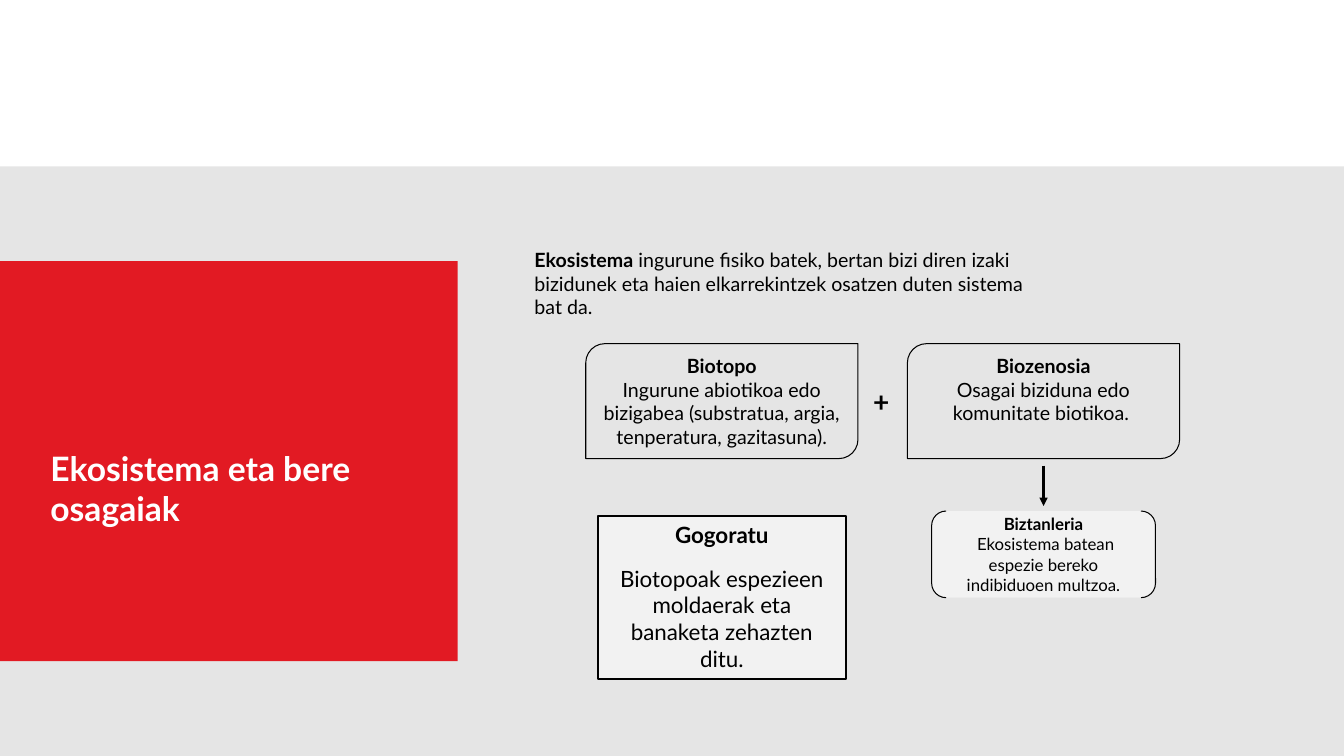
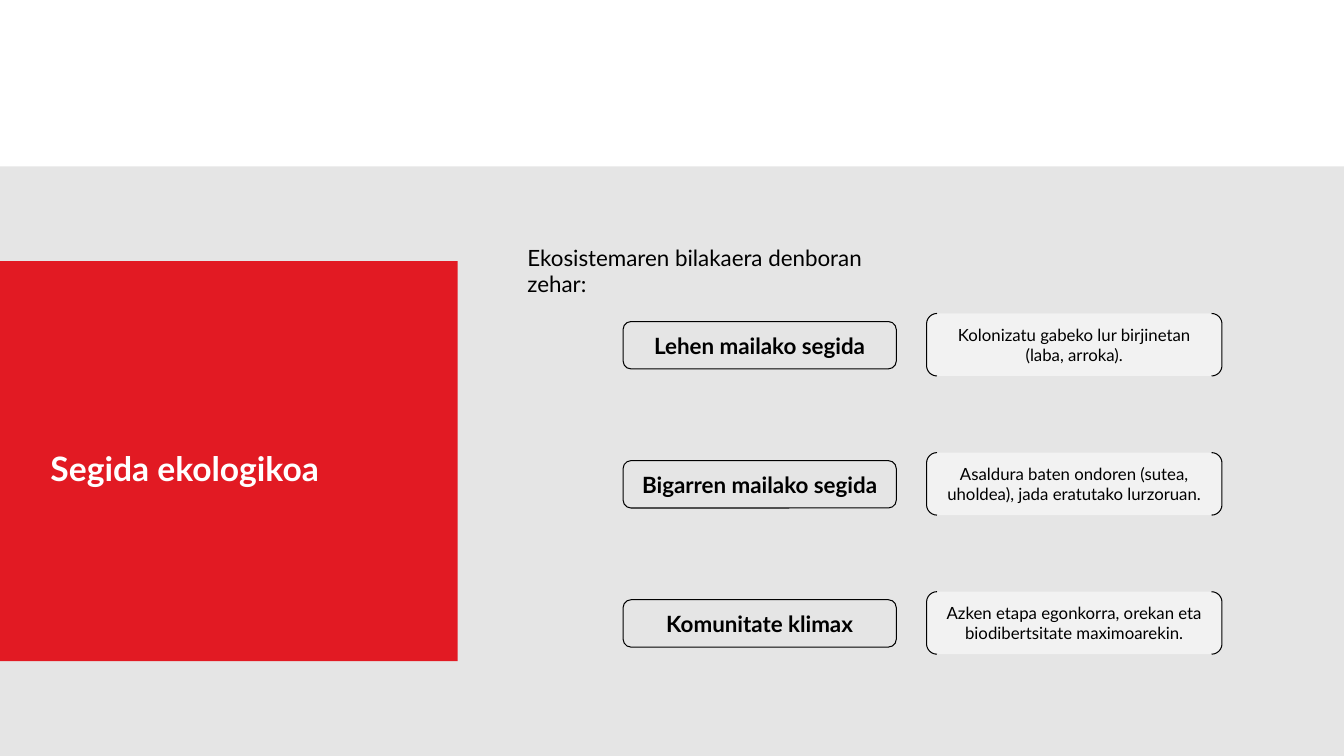
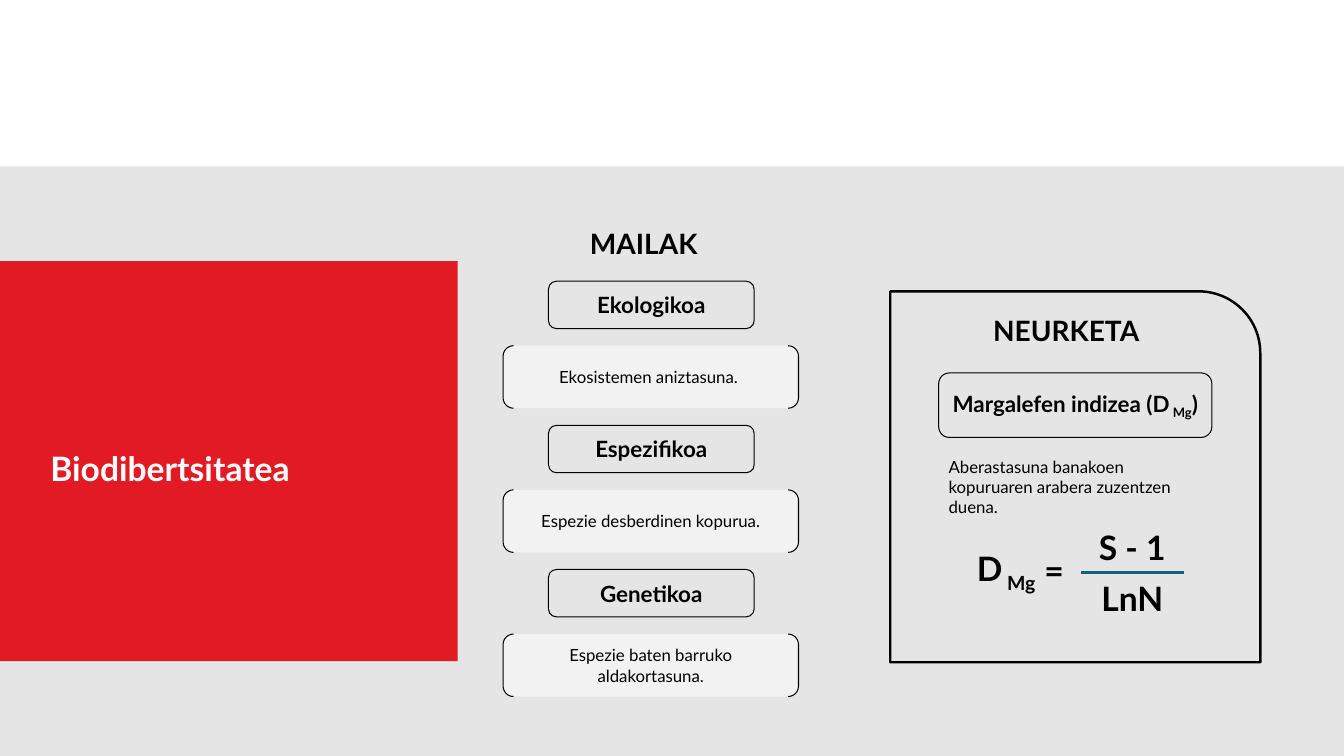
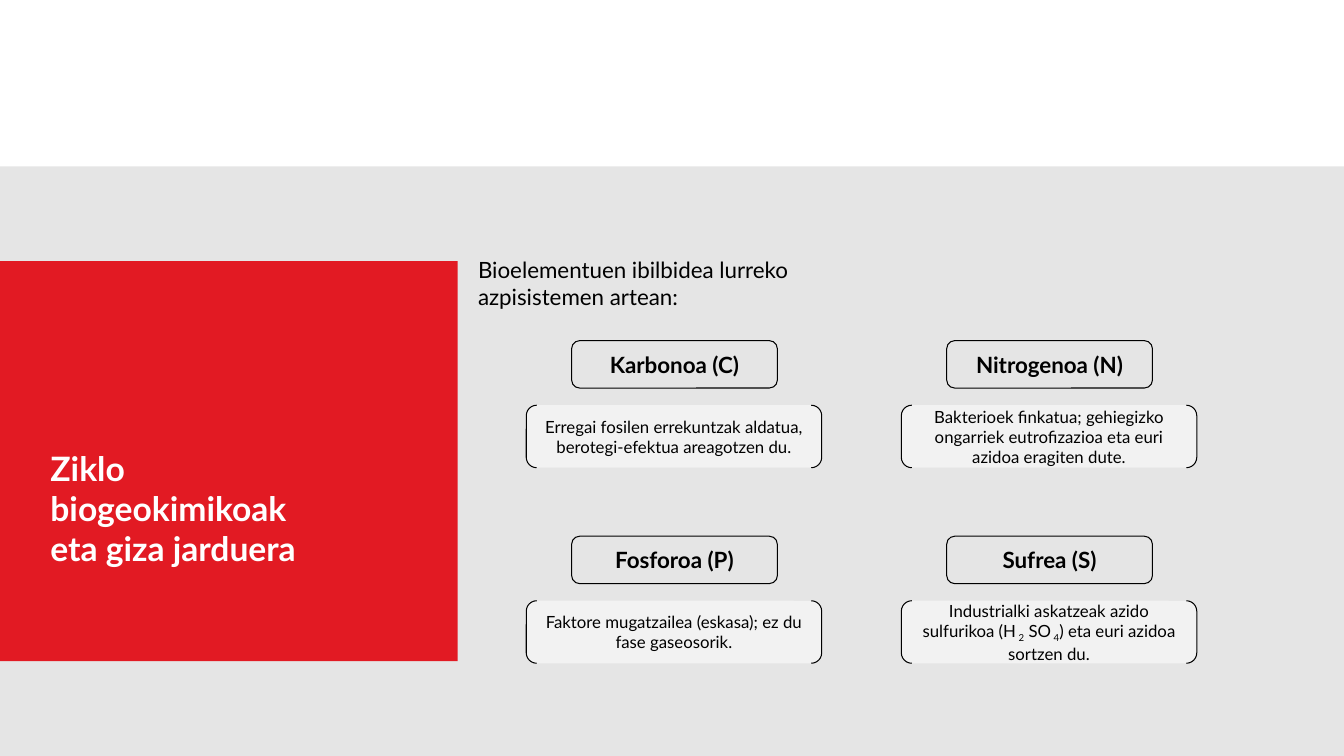
from dataclasses import dataclass
from typing import Any, NamedTuple, Optional

import lxml.etree
import pptx
import pptx.dml.color
import pptx.enum.shapes
import pptx.enum.text
import pptx.oxml.ns
import pptx.util

Inches = pptx.util.Inches
Pt = pptx.util.Pt
Kind = pptx.enum.shapes.MSO_SHAPE
Align = pptx.enum.text.PP_ALIGN
Anchor = pptx.enum.text.MSO_ANCHOR
qn = pptx.oxml.ns.qn


# Theme
@dataclass(frozen=True)
class Theme:
    font: str = "Lato"
    black: str = "000000"
    white: str = "FFFFFF"
    panel: str = "E5E5E5"
    red: str = "E21A23"
    note: str = "F2F2F2"
    rule: str = "156082"
    title: int = 24
    heading: int = 20
    term: int = 16
    body: int = 14
    detail: int = 12
    thin: float = 0.75
    medium: float = 1.5
    thick: float = 1.75


THEME = Theme()


class Place(NamedTuple):
    left: float
    top: float
    width: float
    height: float

    def lengths(self) -> list[int]:
        return [Inches(value) for value in self]


class Span(NamedTuple):
    text: str
    bold: bool = False
    subscript: bool = False


class Para(NamedTuple):
    spans: list[Span]
    after: float = 0
    spacing: Optional[float] = None


class Look(NamedTuple):
    kind: Any
    fill: Optional[str] = None
    opacity: int = 100
    line: Optional[float] = None
    anchor: Any = Anchor.MIDDLE
    align: Any = Align.CENTER


class Card(NamedTuple):
    term: str
    detail: list[Span]


PLAIN = Look(Kind.ROUNDED_RECTANGLE, align=Align.LEFT)
TERM = Look(Kind.ROUNDED_RECTANGLE, line=THEME.thin)
DETAIL = Look(Kind.DOUBLE_BRACKET, THEME.white, 50, THEME.thin)
COMPONENT = Look(Kind.ROUND_2_DIAG_RECTANGLE, line=THEME.thin, anchor=Anchor.TOP)
NOTE = Look(Kind.RECTANGLE, THEME.note, line=THEME.medium, anchor=Anchor.TOP)
COLUMN = Look(Kind.ROUND_1_RECTANGLE, anchor=Anchor.TOP)
FRAME = COLUMN._replace(line=THEME.thick)


def colour(code: str) -> pptx.dml.color.RGBColor:
    return pptx.dml.color.RGBColor.from_string(code)


def one(text: str, bold: bool = False) -> list[Para]:
    return [Para([Span(text, bold)])]


# Text and shapes
def write(box: Any, paras: list[Para], size: int, align: Any, anchor: Any,
          ink: str = THEME.black) -> None:
    frame = box.text_frame
    frame.word_wrap = True
    frame.vertical_anchor = anchor
    for index, content in enumerate(paras):
        para = frame.add_paragraph() if index else frame.paragraphs[0]
        para.alignment = align
        if content.after:
            para.space_after = Pt(content.after)
        if content.spacing:
            para.line_spacing = content.spacing
        for part in content.spans:
            span = para.add_run()
            span.text = part.text
            span.font.name = THEME.font
            span.font.size = Pt(size)
            span.font.bold = part.bold
            span.font.color.rgb = colour(ink)
            if part.subscript:
                span._r.get_or_add_rPr().set("baseline", "-25000")


def add_box(shapes: Any, place: Place, look: Look, paras: list[Para] = [],
            size: int = THEME.body) -> Any:
    box = shapes.add_shape(look.kind, *place.lengths())
    box.shadow.inherit = False
    if look.fill:
        box.fill.solid()
        box.fill.fore_color.rgb = colour(look.fill)
        if look.opacity < 100:
            tint = box.element.spPr.find(f"{qn('a:solidFill')}/{qn('a:srgbClr')}")
            lxml.etree.SubElement(tint, qn("a:alpha")).set("val", str(look.opacity * 1000))
    else:
        box.fill.background()
    if look.line:
        box.line.color.rgb = colour(THEME.black)
        box.line.width = Pt(look.line)
    else:
        box.line.fill.background()
    if paras:
        write(box, paras, size, look.align, look.anchor)
    return box


def add_text(shapes: Any, place: Place, paras: list[Para], size: int,
             align: Any = Align.LEFT) -> None:
    write(shapes.add_textbox(*place.lengths()), paras, size, align, Anchor.TOP)


def add_line(shapes: Any, start: tuple[float, float], end: tuple[float, float],
             ink: str, arrow: bool = False) -> None:
    line = shapes.add_connector(pptx.enum.shapes.MSO_CONNECTOR.STRAIGHT,
                                *[Inches(value) for value in start + end])
    line.line.color.rgb = colour(ink)
    line.line.width = Pt(THEME.medium)
    if arrow:
        outline = line.line._get_or_add_ln()
        lxml.etree.SubElement(outline, qn("a:tailEnd")).set("type", "triangle")
    lxml.etree.SubElement(line.element.spPr, qn("a:effectLst"))


def add_term(shapes: Any, left: float, top: float, width: float, text: str) -> None:
    add_box(shapes, Place(left, top, width, 0.47), TERM, one(text, True), THEME.term)


def add_detail(shapes: Any, left: float, top: float, spans: list[Span]) -> None:
    add_box(shapes, Place(left, top, 2.93, 0.62), DETAIL, [Para(spans)], THEME.detail)


def add_card(shapes: Any, left: float, top: float, card: Card) -> None:
    """A term with its explanation centred below it."""
    add_term(shapes, left, top, 2.04, card.term)
    add_detail(shapes, left - 0.45, top + 0.64, card.detail)


# Shared page parts
def add_bands(page: Any) -> None:
    """Draw the grey panel and red block, then move them to the layout."""
    bands = [(Place(0, 1.65, 13.33, 5.85), THEME.panel),
             (Place(0, 2.59, 4.54, 3.97), THEME.red)]
    tree = page.slide_layout.element.cSld.spTree
    for index, (place, fill) in enumerate(bands):
        band = add_box(page.shapes, place, Look(Kind.RECTANGLE, fill))
        band.element.nvSpPr.cNvPr.set("id", str(20 + index))
        tree.insert(2 + index, band.element)


def add_page(deck: Any, title: str, width: float = 3.01, height: float = 0.91) -> Any:
    page = deck.slides.add_slide(deck.slide_layouts[5])
    box = page.shapes.title
    box.left, box.top, box.width, box.height = Place(0.4, 4.39, width, height).lengths()
    write(box, one(title, True), THEME.title, Align.LEFT, Anchor.TOP, THEME.white)
    box.text_frame.auto_size = pptx.enum.text.MSO_AUTO_SIZE.SHAPE_TO_FIT_TEXT
    return page


# Slides
def ecosystem(deck: Any) -> None:
    page = add_page(deck, "Ekosistema eta bere osagaiak", 3.24)
    add_bands(page)
    shapes = page.shapes
    components = [
        ("Biotopo", "Ingurune abiotikoa edo bizigabea (substratua, argia, "
                    "tenperatura, gazitasuna)."),
        ("Biozenosia", "Osagai biziduna edo komunitate biotikoa. "),
    ]
    for index, (name, meaning) in enumerate(components):
        add_box(shapes, Place(5.81 + index * 3.19, 3.41, 2.7, 1.14), COMPONENT,
                one(name, True) + one(meaning))
    add_box(shapes, Place(9.24, 5.07, 2.22, 0.86), DETAIL,
            one("Biztanleria", True)
            + one(" Ekosistema batean espezie bereko indibiduoen multzoa."),
            THEME.detail)
    add_box(shapes, Place(5.16, 2.38, 5.42, 0.86), PLAIN, [Para([
        Span("Ekosistema", True),
        Span(" ingurune fisiko batek, bertan bizi diren izaki bizidunek eta haien "
             "elkarrekintzek osatzen duten sistema bat da."),
    ])])
    add_box(shapes, Place(5.93, 5.12, 2.46, 1.62), NOTE,
            [Para([Span("Gogoratu", True)], after=12)]
            + one("Biotopoak espezieen moldaerak eta banaketa zehazten ditu."),
            THEME.term)
    add_box(shapes, Place(8.54, 3.55, 0.45, 0.86), PLAIN, one("+", True), THEME.heading)
    add_line(shapes, (10.35, 4.62), (10.35, 5.02), THEME.black, arrow=True)


def succession(deck: Any) -> None:
    shapes = add_page(deck, "Segida ekologikoa").shapes
    add_box(shapes, Place(5.11, 2.45, 4.08, 0.47), PLAIN,
            one("Ekosistemaren bilakaera denboran zehar:"), THEME.term)
    stages = [
        Card("Lehen mailako segida",
             [Span("Kolonizatu gabeko lur birjinetan (laba, arroka).")]),
        Card("Bigarren mailako segida",
             [Span("Asaldura baten ondoren (sutea, uholdea), jada eratutako lurzoruan.")]),
        Card("Komunitate klimax",
             [Span("Azken etapa egonkorra, orekan eta biodibertsitate maximoarekin.")]),
    ]
    for index, stage in enumerate(stages):
        top = 3.19 + index * 1.38
        add_term(shapes, 6.18, top, 2.71, stage.term)
        add_detail(shapes, 9.19, top - 0.08, stage.detail)


def biodiversity(deck: Any) -> None:
    shapes = add_page(deck, "Biodibertsitatea", height=0.5).shapes
    # Levels
    add_box(shapes, Place(4.64, 2.2, 3.67, 4.99), COLUMN, one("MAILAK", True), THEME.heading)
    levels = [
        Card("Ekologikoa", [Span("Ekosistemen aniztasuna. ")]),
        Card("Espezifikoa", [Span("Espezie desberdinen kopurua.")]),
        Card("Genetikoa", [Span("Espezie baten barruko aldakortasuna.")]),
    ]
    for index, level in enumerate(levels):
        add_card(shapes, 5.44, 2.79 + index * 1.43, level)

    # Measurement
    add_box(shapes, Place(8.83, 2.89, 3.67, 3.68), FRAME,
            [Para([Span("NEURKETA", True)], spacing=1.5)], THEME.heading)
    add_box(shapes, Place(9.31, 3.7, 2.71, 0.64), TERM, [Para([
        Span("Margalefen indizea (D", True), Span(" Mg", True, True), Span(") ", True),
    ])], THEME.term)
    add_text(shapes, Place(9.31, 4.48, 2.71, 0.5),
             one("Aberastasuna banakoen kopuruaren arabera zuzentzen duena."), THEME.detail)

    # Formula
    formula = shapes.add_group_shape().shapes
    add_text(formula, Place(9.59, 5.39, 0.83, 0.5),
             [Para([Span("D", True), Span(" Mg", True, True)])], THEME.title)
    add_text(formula, Place(10.26, 5.41, 0.46, 0.5), one("=", True), THEME.title)
    for index, term in enumerate(["S - 1", "LnN"]):
        add_text(formula, Place(10.72, 5.18 + index * 0.5, 1.02, 0.5),
                 one(term, True), THEME.title, Align.CENTER)
    add_line(formula, (10.72, 5.68), (11.74, 5.68), THEME.rule)


def cycles(deck: Any) -> None:
    shapes = add_page(deck, "Ziklo biogeokimikoak eta giza jarduera", height=1.72).shapes
    add_box(shapes, Place(4.62, 2.57, 4.08, 0.47), PLAIN,
            one("Bioelementuen ibilbidea lurreko azpisistemen artean:"), THEME.term)
    elements = [
        Card("Karbonoa (C)", [Span("Erregai fosilen errekuntzak aldatua, "
                                   "berotegi-efektua areagotzen du.")]),
        Card("Nitrogenoa (N)", [Span("Bakterioek finkatua; gehiegizko ongarriek "
                                     "eutrofizazioa eta euri azidoa eragiten dute.")]),
        Card("Fosforoa (P)", [Span("Faktore mugatzailea (eskasa); ez du fase gaseosorik.")]),
        Card("Sufrea (S)", [
            Span("Industrialki askatzeak azido sulfurikoa (H"), Span(" 2", subscript=True),
            Span(" SO"), Span(" 4", subscript=True),
            Span(") eta euri azidoa sortzen du."),
        ]),
    ]
    for index, element in enumerate(elements):
        row, column = divmod(index, 2)
        add_card(shapes, 5.67 + column * 3.72, 3.38 + row * 1.94, element)


def main() -> None:
    deck = pptx.Presentation()
    deck.slide_width = Inches(13.33)
    deck.slide_height = Inches(7.5)
    for build in (ecosystem, succession, biodiversity, cycles):
        build(deck)
    deck.save("out.pptx")


if __name__ == "__main__":
    main()
